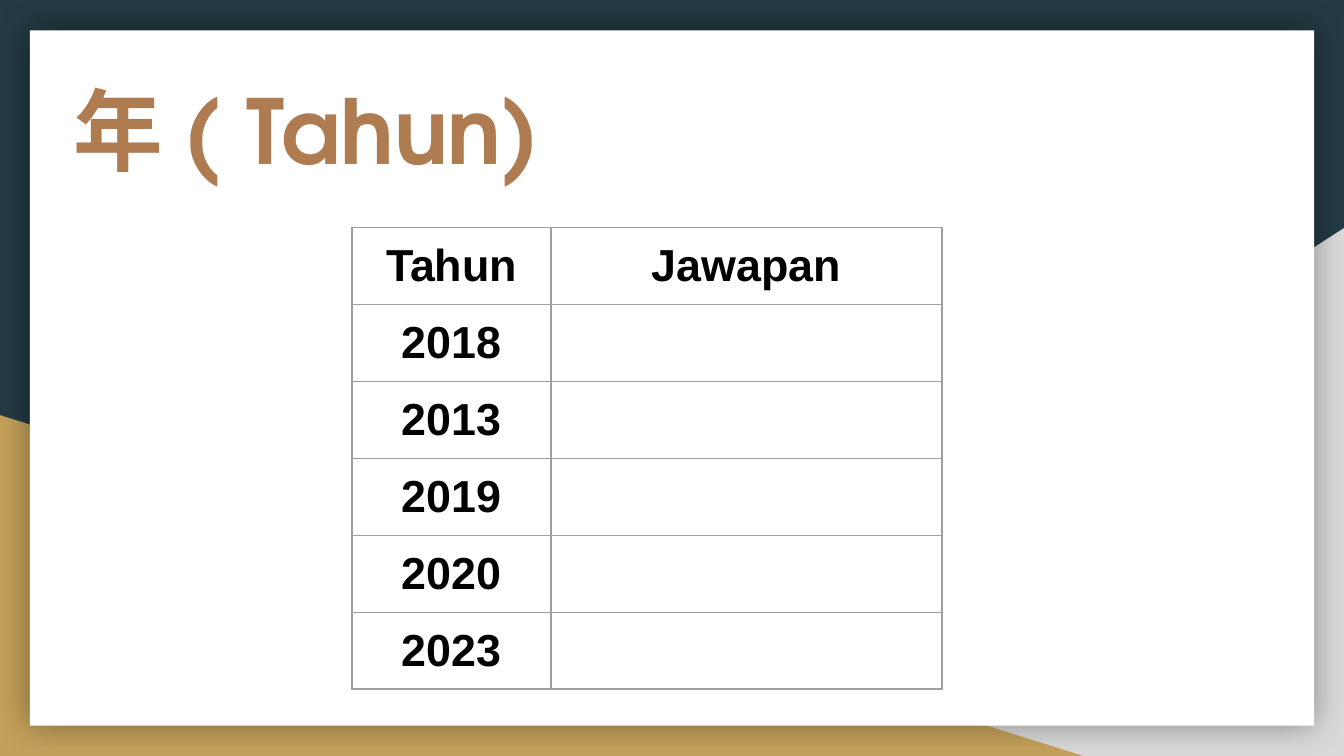
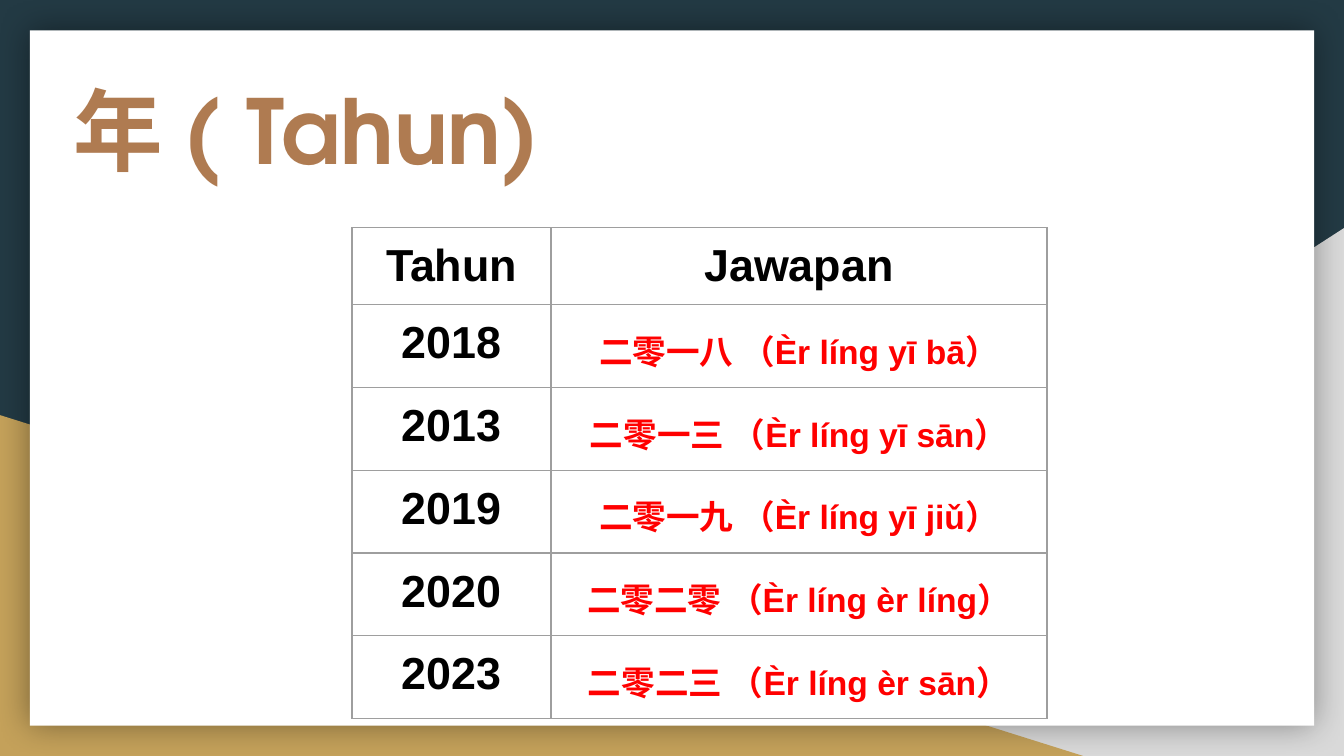
from lxml.etree import SubElement
from pptx import Presentation
from pptx.dml.color import RGBColor
from pptx.enum.shapes import MSO_SHAPE
from pptx.enum.text import MSO_ANCHOR, MSO_AUTO_SIZE, PP_ALIGN
from pptx.oxml import parse_xml
from pptx.oxml.ns import nsdecls, qn
from pptx.util import Pt

# Content
TITLE = "年 ( Tahun)"
HEADER = ("Tahun", "Jawapan")
YEARS = ["2018", "2013", "2019", "2020", "2023"]
ANSWERS = [
    "二零一八 （Èr líng yī bā）",
    "二零一三 （Èr líng yī sān）",
    "二零一九 （Èr líng yī jiǔ）",
    "二零二零 （Èr líng èr líng）",
    "二零二三 （Èr líng èr sān）",
]
SLIDES = [  # answers, width of the answer column
    ([""] * len(YEARS), 209.5),
    (ANSWERS, 265.7),
]

# Shared look
NAVY = RGBColor(0x23, 0x3A, 0x44)
GREY = RGBColor(0xD9, 0xD9, 0xD9)
GOLD = RGBColor(0xC4, 0xA1, 0x5A)
WHITE = RGBColor(0xFF, 0xFF, 0xFF)
BROWN = RGBColor(0xAF, 0x7B, 0x51)
BLACK = RGBColor(0x00, 0x00, 0x00)
RED = RGBColor(0xFF, 0x00, 0x00)
RULE = RGBColor(0x9E, 0x9E, 0x9E)

WIDTH, HEIGHT = 720, 405
BACKDROP = [  # shape, left, top, width, height, colour
    (MSO_SHAPE.RIGHT_TRIANGLE, 282, 122.2, 438, 282.8, GREY),
    (MSO_SHAPE.RIGHT_TRIANGLE, 0, 222.4, 580.3, 182.6, GOLD),
    (MSO_SHAPE.RECTANGLE, 16, 16.2, 688, 372.5, WHITE),
]
TITLE_BOX = (16.3, 15.9, 296, 106.4)
TABLE_LEFT, TABLE_TOP = 188.6, 122
YEAR_WIDTH, ROW_HEIGHT = 106.6, 38.4
PADDING = 7.2

TITLE_FONT = dict(name="TeX Gyre Adventor", size=Pt(48), bold=True)
CELL_FONT = dict(name="Arial", size=Pt(24), bold=True)
ANSWER_FONT = dict(CELL_FONT, size=Pt(18))
MARGINS = {f"margin_{side}": Pt(PADDING)
           for side in ("left", "right", "top", "bottom")}


def apply(target, values):
    for name, value in values.items():
        setattr(target, name, value)


def write(p, text, font, colour):
    p.alignment = PP_ALIGN.CENTER
    r = p.add_run()
    r.text = text
    apply(r.font, font)
    r.font.color.rgb = colour
    return r


def add_backdrop(layout, slide):
    """Draw the backdrop shapes and place them behind the layout's placeholders."""
    layout.background.fill.solid()
    layout.background.fill.fore_color.rgb = NAVY
    for i, (kind, *box, colour) in enumerate(BACKDROP):
        sp = slide.shapes.add_shape(kind, *map(Pt, box))
        sp.shadow.inherit = False
        sp.fill.solid()
        sp.fill.fore_color.rgb = colour
        sp.line.fill.background()
        props = sp._element.spPr
        if colour == GREY:
            props.find(qn("a:xfrm")).set("flipH", "1")
        if colour == WHITE:
            props.find(qn("a:effectLst")).append(parse_xml(
                f'<a:outerShdw {nsdecls("a")} blurRad="{Pt(18)}" dist="0" '
                'algn="ctr" rotWithShape="0"><a:srgbClr val="000000">'
                '<a:alpha val="40000"/></a:srgbClr></a:outerShdw>'))
        sp._element.nvSpPr.cNvPr.set("id", str(20 + i))
        layout.shapes._spTree.insert(2 + i, sp._element)


def add_title(slide):
    sp = slide.shapes.title
    apply(sp, dict(zip(("left", "top", "width", "height"), map(Pt, TITLE_BOX))))
    tf = sp.text_frame
    apply(tf, dict(MARGINS, word_wrap=True, auto_size=MSO_AUTO_SIZE.NONE,
                   vertical_anchor=MSO_ANCHOR.MIDDLE))
    write(tf.paragraphs[0], TITLE, TITLE_FONT, BROWN)


def add_borders(cell):
    tc_pr = cell._tc.get_or_add_tcPr()
    for i, side in enumerate("LRTB"):
        tc_pr.insert(i, parse_xml(
            f'<a:ln{side} {nsdecls("a")} w="{Pt(0.75)}"><a:solidFill>'
            f'<a:srgbClr val="{RULE}"/></a:solidFill></a:ln{side}>'))


def highlight(r, colour):
    r_pr = r._r.get_or_add_rPr()
    mark = SubElement(r_pr, qn("a:highlight"))
    SubElement(mark, qn("a:srgbClr")).set("val", str(colour))
    r_pr.find(qn("a:solidFill")).addnext(mark)


def add_year_table(slide, answers, answer_width):
    rows = [HEADER, *zip(YEARS, answers)]
    widths = (YEAR_WIDTH, answer_width)
    table = slide.shapes.add_table(
        len(rows), len(widths), Pt(TABLE_LEFT), Pt(TABLE_TOP),
        Pt(sum(widths)), Pt(ROW_HEIGHT * len(rows))).table
    apply(table, dict(first_row=False, horz_banding=False))
    for column, width in zip(table.columns, widths):
        column.width = Pt(width)
    for i, row in enumerate(rows):
        for j, text in enumerate(row):
            cell = table.cell(i, j)
            apply(cell, MARGINS)
            cell.fill.background()
            add_borders(cell)
            p = cell.text_frame.paragraphs[0]
            if i and j and text:
                p.line_spacing = 1.15
                highlight(write(p, text, ANSWER_FONT, RED), WHITE)
            elif text:
                write(p, text, CELL_FONT, BLACK)


def main():
    prs = Presentation()
    prs.slide_width, prs.slide_height = Pt(WIDTH), Pt(HEIGHT)
    layout = prs.slide_layouts[5]
    for i, (answers, answer_width) in enumerate(SLIDES):
        slide = prs.slides.add_slide(layout)
        if i == 0:
            add_backdrop(layout, slide)
        add_title(slide)
        add_year_table(slide, answers, answer_width)
    prs.save("out.pptx")


if __name__ == "__main__":
    main()
